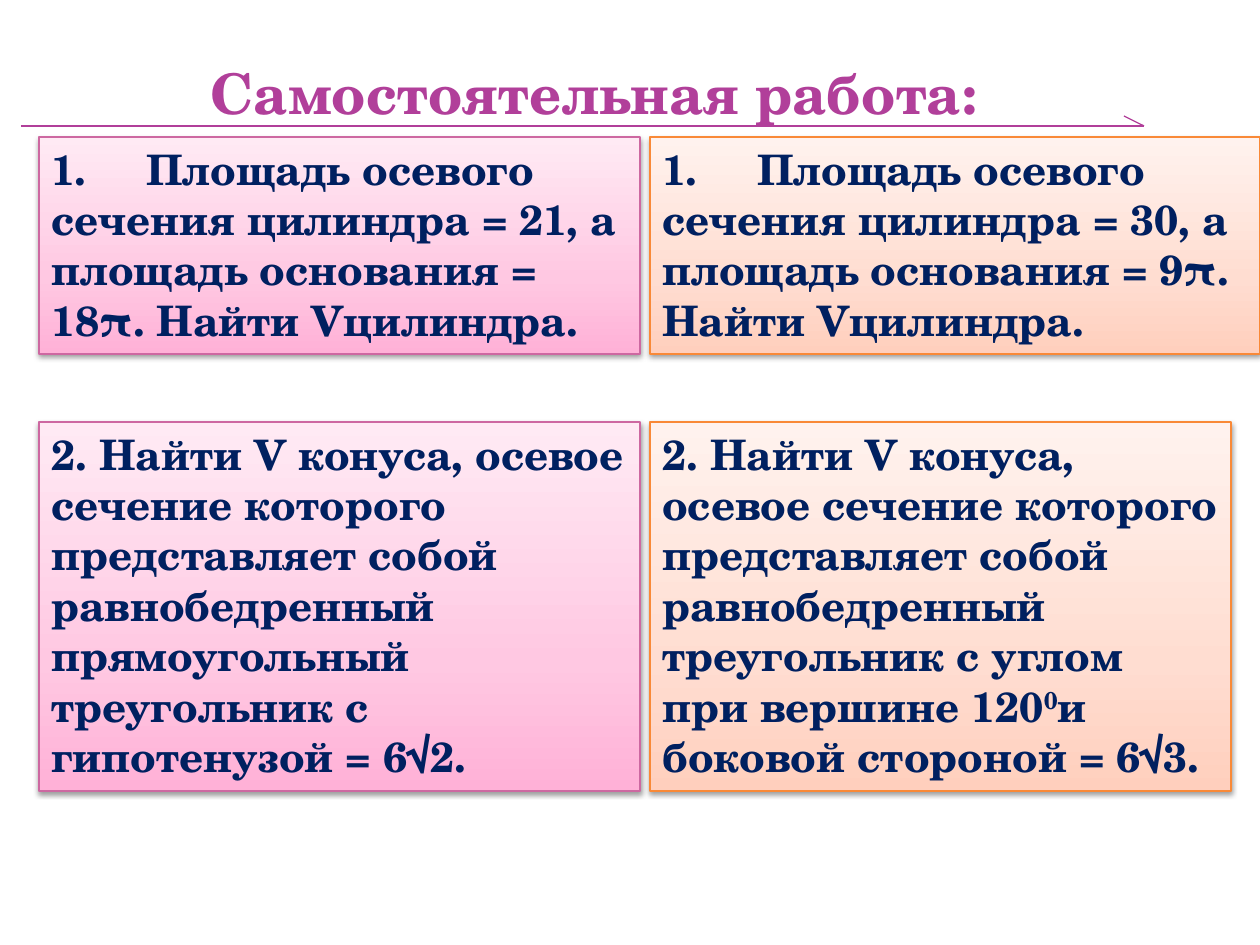
import copy

import pptx
import pptx.dml.color
import pptx.enum.shapes
import pptx.enum.text
import pptx.oxml
import pptx.oxml.ns
import pptx.util

PX = 914400 // 126
FONT = "TeX Gyre Schola"
PURPLE = "B13F9A"
NAVY = "002060"
DRAWING_NS = pptx.oxml.ns.nsdecls("a")
SHADOW = (
    f'<a:outerShdw {DRAWING_NS} blurRad="40000" dist="20000" dir="5400000" rotWithShape="0">'
    '<a:srgbClr val="000000"><a:alpha val="38000"/></a:srgbClr></a:outerShdw>'
)


def color(hex_string):
    return pptx.dml.color.RGBColor.from_string(hex_string)


def style_run(run, size, hex_string):
    run.font.name = FONT
    run.font.size = pptx.util.Pt(size)
    run.font.bold = True
    run.font.color.rgb = color(hex_string)


presentation = pptx.Presentation()
presentation.slide_width = 1260 * PX
presentation.slide_height = 945 * PX
slide = presentation.slides.add_slide(presentation.slide_layouts[6])

# Half-arrow under the title
for start_x, start_y in [(21, 126), (1124, 116)]:
    line = slide.shapes.add_connector(
        pptx.enum.shapes.MSO_CONNECTOR.STRAIGHT,
        start_x * PX, start_y * PX, 1144 * PX, 126 * PX)
    line.line.color.rgb = color(PURPLE)
    line.line.width = pptx.util.Pt(0.75)
    line._element.spPr.append(pptx.oxml.parse_xml(f"<a:effectLst {DRAWING_NS}/>"))

# Title
title = slide.shapes.add_textbox(63 * PX, 53 * PX, 1061 * PX, 78 * PX)
title.text_frame.word_wrap = True
title.text_frame.vertical_anchor = pptx.enum.text.MSO_ANCHOR.MIDDLE
title.text_frame.text = "Самостоятельная работа:"
paragraph = title.text_frame.paragraphs[0]
paragraph.alignment = pptx.enum.text.PP_ALIGN.CENTER
style_run(paragraph.runs[0], 32, PURPLE)

# Task cards: one column per variant, one row per task
PINK = (["FFB1D7", "FFC8E2", "FFEAF4"], "CD68A1")
ORANGE = (["FFCFBD", "FFDDD1", "FFF2EE"], "F98937")
LEFT, RIGHT = 39, 650
CYLINDER, CONE = (137, 217), (422, 369)  # top, height
cards = [
    (LEFT, CYLINDER, 601, PINK,
     ["1.\tПлощадь осевого сечения цилиндра = 21, а площадь основания = 18π. "
      "Найти Vцилиндра."]),
    (RIGHT, CYLINDER, 610, ORANGE,
     ["1.\tПлощадь осевого сечения цилиндра = 30, а площадь основания = 9π. "
      "Найти Vцилиндра."]),
    (LEFT, CONE, 601, PINK,
     ["2. Найти V конуса, осевое сечение которого представляет собой "
      "равнобедренный прямоугольный треугольник с гипотенузой = 6√2."]),
    (RIGHT, CONE, 581, ORANGE,
     ["2. Найти V конуса, осевое сечение которого представляет собой "
      "равнобедренный треугольник с углом при вершине 120",
      "0", "и боковой стороной = 6√3."]),
]
for left, (top, height), width, (stop_colors, border), texts in cards:
    card = slide.shapes.add_shape(
        pptx.enum.shapes.MSO_SHAPE.RECTANGLE,
        left * PX, top * PX, width * PX, height * PX)
    card.line.color.rgb = color(border)
    card.line.width = pptx.util.Pt(0.75)

    # Three-stop gradient, darkest at the bottom
    card.fill.gradient()
    card.fill.gradient_angle = 90
    stop_list = card._element.spPr.find(".//" + pptx.oxml.ns.qn("a:gsLst"))
    stop_list.insert(1, copy.deepcopy(stop_list[0]))
    for stop, position, stop_color in zip(card.fill.gradient_stops, (0, 0.35, 1), stop_colors):
        stop.position = position
        stop.color.rgb = color(stop_color)

    # Soft shadow below
    card.shadow.inherit = False
    effects = card._element.spPr.find(pptx.oxml.ns.qn("a:effectLst"))
    effects.append(pptx.oxml.parse_xml(SHADOW))

    # Task text, with a tab stop after the number
    frame = card.text_frame
    frame.word_wrap = True
    frame.auto_size = pptx.enum.text.MSO_AUTO_SIZE.SHAPE_TO_FIT_TEXT
    frame.vertical_anchor = pptx.enum.text.MSO_ANCHOR.TOP
    paragraph = frame.paragraphs[0]
    paragraph.alignment = pptx.enum.text.PP_ALIGN.LEFT
    paragraph._p.get_or_add_pPr().append(pptx.oxml.parse_xml(
        f'<a:tabLst {DRAWING_NS}><a:tab pos="{95 * PX}" algn="l"/></a:tabLst>'))
    for text in texts:
        run = paragraph.add_run()
        run.text = text
        style_run(run, 24, NAVY)
        if text == "0":
            run._r.get_or_add_rPr().set("baseline", "30000")

presentation.save("out.pptx")
